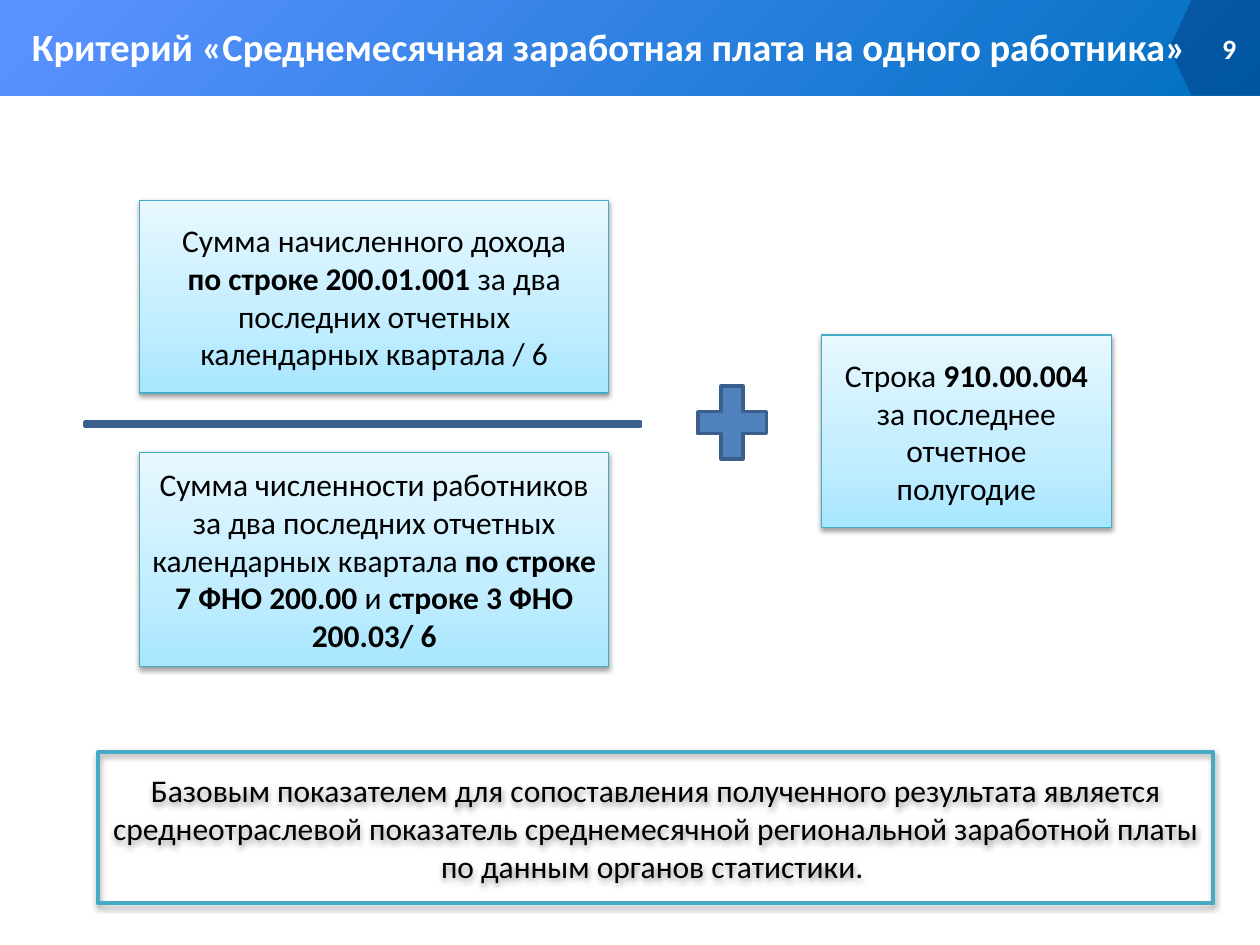
from lxml import etree
from pptx import Presentation
from pptx.dml.color import RGBColor
from pptx.enum.shapes import MSO_SHAPE
from pptx.enum.text import MSO_ANCHOR, PP_ALIGN
from pptx.oxml import parse_xml
from pptx.oxml.ns import nsdecls, qn
from pptx.util import Inches, Pt

RECTANGLE = MSO_SHAPE.RECTANGLE
CENTER, RIGHT = PP_ALIGN.CENTER, PP_ALIGN.RIGHT
MIDDLE, TOP = MSO_ANCHOR.MIDDLE, MSO_ANCHOR.TOP

COLORS = {
    "header_start": "5991FF", "header_end": "0070C0", "tab": "002060",
    "box_bottom": "A7E6FF", "box_middle": "C1EDFF", "box_top": "E7F8FF",
    "box_line": "46AAC5", "sign": "4F81BD", "sign_line": "3A5F8C",
    "black": "000000", "white": "FFFFFF",
}
BOX_STOPS = [(0, "box_bottom"), (35, "box_middle"), (100, "box_top")]
HEADER_STOPS = [(4, "header_start"), (100, "header_end")]


def color(name):
    return RGBColor.from_string(COLORS[name])


def set_gradient(shape, stops, angle):
    """Fill with (percent, color name) stops; angle is counter-clockwise degrees."""
    shape.fill.gradient()
    shape.fill.gradient_angle = angle
    stop_list = shape.element.spPr.find(qn("a:gradFill")).find(qn("a:gsLst"))
    for stop in list(stop_list):
        stop_list.remove(stop)
    for percent, name in stops:
        stop = etree.SubElement(stop_list, qn("a:gs"), pos=str(percent * 1000))
        etree.SubElement(stop, qn("a:srgbClr"), val=COLORS[name])


presentation = Presentation()
presentation.slide_width, presentation.slide_height = Inches(10), Inches(7.5)
slide = presentation.slides.add_slide(presentation.slide_layouts[6])
shapes = slide.shapes

# Header band with the slide number tab
header = shapes.add_shape(RECTANGLE, 0, 0, Inches(10), Inches(0.76))
header.shadow.inherit = False
set_gradient(header, HEADER_STOPS, 315)
header.line.fill.background()

tab = shapes.add_shape(MSO_SHAPE.PENTAGON, Inches(9.28), 0, Inches(0.72), Inches(0.76))
tab.shadow.inherit = False
tab.rotation = 180
tab.adjustments[0] = 0.245
tab.fill.solid()
tab.fill.fore_color.rgb = color("tab")
tab_color = tab.element.spPr.find(qn("a:solidFill"))[0]
etree.SubElement(tab_color, qn("a:alpha"), val="33000")
tab.line.fill.background()

HEADER_TEXTS = [
    ("9", 9.37, 0.23, 0.54, 0.3, 16, RIGHT, MIDDLE),
    ("Критерий «Среднемесячная заработная плата на одного работника»",
     0, 0.13, 9.67, 0.47, 22, CENTER, TOP),
]
for text, left, top, width, height, size, alignment, anchor in HEADER_TEXTS:
    text_box = shapes.add_textbox(Inches(left), Inches(top), Inches(width), Inches(height))
    text_frame = text_box.text_frame
    text_frame.word_wrap = True
    text_frame.vertical_anchor = anchor
    paragraph = text_frame.paragraphs[0]
    paragraph.text = text
    paragraph.alignment = alignment
    paragraph.font.name = "Calibri"
    paragraph.font.size = Pt(size)
    paragraph.font.bold = True
    paragraph.font.color.rgb = color("white")

# Fraction bar and plus sign
SIGNS = [
    (MSO_SHAPE.MATH_MINUS, -0.12, 3.3, 6, 0.13),
    (MSO_SHAPE.MATH_PLUS, 5.44, 2.96, 0.74, 0.79),
]
for kind, left, top, width, height in SIGNS:
    sign = shapes.add_shape(kind, Inches(left), Inches(top), Inches(width), Inches(height))
    sign.shadow.inherit = False
    sign.fill.solid()
    sign.fill.fore_color.rgb = color("sign")
    sign.line.color.rgb = color("sign_line")
    sign.line.width = Pt(2)

# Formula terms and the closing note: position, filled, line width, (text, bold) runs
BOXES = [
    (1.11, 1.59, 3.72, 1.53, True, 0.75, [
        ("Сумма начисленного дохода\v", False),
        ("по строке 200.01.001", True),
        (" за два последних отчетных календарных квартала / 6", False)]),
    (1.11, 3.59, 3.72, 1.7, True, 0.75, [
        ("Сумма численности работников за два последних отчетных "
         "календарных квартала ", False),
        ("по строке 7 ФНО 200.00", True),
        (" и ", False),
        ("строке 3 ФНО 200.03/ 6", True)]),
    (6.52, 2.66, 2.3, 1.53, True, 0.75, [
        ("Строка ", False),
        ("910.00.004", True),
        (" за последнее отчетное полугодие", False)]),
    (0.78, 5.97, 8.85, 1.2, False, 2.25, [
        ("Базовым показателем для сопоставления полученного результата является "
         "среднеотраслевой показатель среднемесячной региональной заработной платы "
         "по данным органов статистики. ", False)]),
]
SHADOW = (
    f'<a:effectLst {nsdecls("a")}><a:outerShdw blurRad="{Pt(3.1)}" dist="{Pt(1.6)}" '
    f'dir="5400000" rotWithShape="0"><a:srgbClr val="{COLORS["black"]}">'
    '<a:alpha val="38000"/></a:srgbClr></a:outerShdw></a:effectLst>'
)
for left, top, width, height, filled, line_width, runs in BOXES:
    box = shapes.add_shape(RECTANGLE, Inches(left), Inches(top), Inches(width), Inches(height))
    if filled:
        set_gradient(box, BOX_STOPS, 90)
    else:
        box.fill.background()
    box.line.color.rgb = color("box_line")
    box.line.width = Pt(line_width)
    box.element.spPr.append(parse_xml(SHADOW))
    text_frame = box.text_frame
    text_frame.word_wrap = True
    text_frame.vertical_anchor = MIDDLE
    paragraph = text_frame.paragraphs[0]
    paragraph.alignment = CENTER
    paragraph.font.name = "Calibri"
    paragraph.font.size = Pt(18)
    paragraph.font.color.rgb = color("black")
    for text, bold in runs:
        run = paragraph.add_run()
        run.text = text.rstrip("\v")
        run.font.bold = bold
        if text.endswith("\v"):
            paragraph.add_line_break()

presentation.save("out.pptx")
